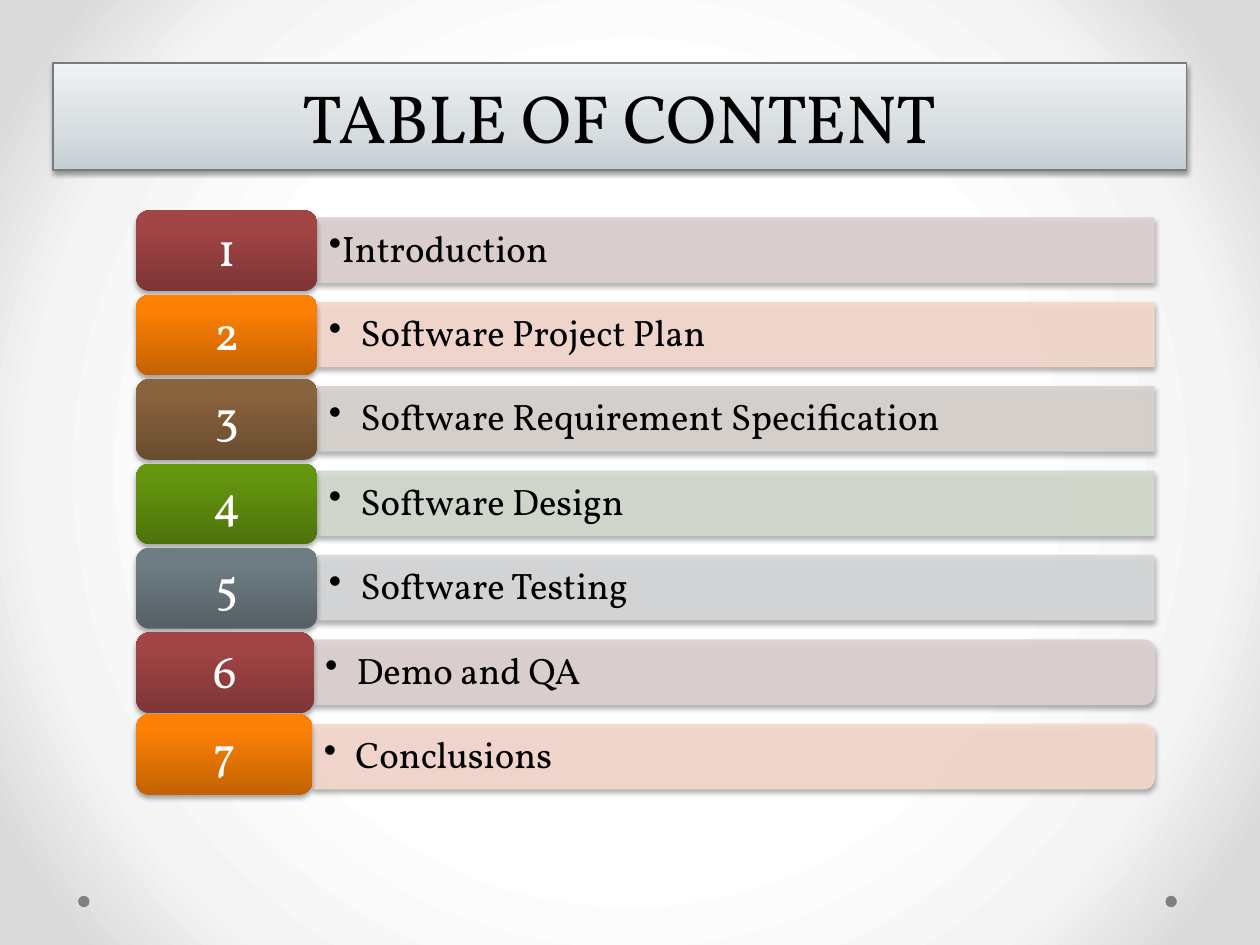
import pptx
import pptx.dml.color
import pptx.enum.shapes
import pptx.enum.text
import pptx.oxml
import pptx.oxml.ns
import pptx.util

Inches = pptx.util.Inches
Pt = pptx.util.Pt
qn = pptx.oxml.ns.qn
KIND = pptx.enum.shapes.MSO_SHAPE
ALIGN = pptx.enum.text.PP_ALIGN
FONT = "Vollkorn"
STEP = 0.67
RIGHT = 9.16

# Bar colour, then badge stops from bottom to top
RED = ("DED1D1", [(0, "7D3535"), (80, "A24545"), (100, "A44343")])
ORANGE = ("F5D9CD", [(0, "C26203"), (80, "FB8004"), (100, "FF8002")])
BROWN = ("D9D3CF", [(0, "694C2F"), (80, "89633D"), (100, "8B633C")])
GREEN = ("D3DACD", [(0, "4D720B"), (80, "64940F"), (100, "65970C")])
GREY = ("D6D8D9", [(0, "566065"), (80, "6F7D83"), (100, "6F7E84")])

# Title, theme, badge width, rounded bar, bullet indent, badge lift
ROWS = [
    ("Introduction", RED, 1.44, False, 0, 0),
    ("Software Project Plan", ORANGE, 1.44, False, 0.25, 0),
    ("Software Requirement Specification", BROWN, 1.44, False, 0.25, 0),
    ("Software Design", GREEN, 1.44, False, 0.25, 0),
    ("Software Testing", GREY, 1.44, False, 0.25, 0),
    ("Demo and QA", RED, 1.41, True, 0.25, 0),
    ("Conclusions", ORANGE, 1.4, True, 0.25, 0.02),
]


def color(text):
    return pptx.dml.color.RGBColor.from_string(text)


def make(xml):
    """Parse an XML element whose root lacks the namespace declaration."""
    tag, rest = xml.split(" ", 1)
    return pptx.oxml.parse_xml(f"{tag} {pptx.oxml.ns.nsdecls('a')} {rest}")


def blend(stops, shade='<a:lin ang="16200000" scaled="0"/>'):
    """Return a gradient fill, which runs upward unless told otherwise."""
    marks = "".join(
        f'<a:gs pos="{pos * 1000}"><a:srgbClr val="{tone}"/></a:gs>'
        for pos, tone in stops)
    return make(f'<a:gradFill rotWithShape="1"><a:gsLst>{marks}</a:gsLst>'
                f"{shade}</a:gradFill>")


def swap(fill, props, stops):
    """Put a gradient in the place of a shape's fill."""
    fill.solid()
    old = props.find(qn("a:solidFill"))
    props.replace(old, blend(stops))


def shade(shape, alpha=35, dist=1.8):
    shape.shadow.inherit = False
    glow = shape.element.spPr.find(qn("a:effectLst"))
    glow.append(make(
        f'<a:outerShdw blurRad="{Pt(3.1)}" dist="{Pt(dist)}" dir="5400000" '
        f'rotWithShape="0"><a:srgbClr val="000000">'
        f'<a:alpha val="{alpha * 1000}"/></a:srgbClr></a:outerShdw>'))


def place(slide, kind, left, top, width, height):
    shape = slide.shapes.add_shape(
        kind, Inches(left), Inches(top), Inches(width), Inches(height))
    shape.shadow.inherit = False
    shape.line.fill.background()
    return shape


def write(shape, text, size, tone, align, inset=(0.1, 0.05)):
    """Fill the frame with one centred line and return its paragraph."""
    frame = shape.text_frame
    frame.text = text
    frame.word_wrap = True
    frame.vertical_anchor = pptx.enum.text.MSO_ANCHOR.MIDDLE
    frame.margin_left = frame.margin_right = Inches(inset[0])
    frame.margin_top = frame.margin_bottom = Inches(inset[1])
    line = frame.paragraphs[0]
    line.alignment = align
    font = line.runs[0].font
    font.name, font.size = FONT, Pt(size)
    font.color.rgb = color(tone)
    return line


def add_back(slide):
    slide.background.fill.solid()
    props = slide.element.find(".//" + qn("p:bgPr"))
    props.replace(props[0], blend(
        [(50, "FFFFFF"), (76, "F4F4F4"), (92, "DADADA")],
        '<a:path path="circle"><a:fillToRect l="50000" t="50000" '
        'r="50000" b="50000"/></a:path>'))
    for left in (0.62, 9.25):
        dot = place(slide, KIND.OVAL, left, 7.11, 0.09, 0.09)
        dot.fill.solid()
        dot.fill.fore_color.rgb = color("808080")


def add_head(slide, left, top, width, height):
    head = place(slide, KIND.RECTANGLE, left, top, width, height)
    swap(head.fill, head.element.spPr,
         [(0, "C5CED2"), (35, "D6DCDF"), (100, "EFF2F3")])
    head.line.color.rgb = color("727D82")
    head.line.width = Pt(0.75)
    shade(head, 38, 1.6)
    write(head, "TABLE OF CONTENT", 39, "000000", ALIGN.CENTER)


def add_bar(slide, left, top, width, height, tone, is_round):
    if is_round:
        # Turned a quarter so that the round corners face right
        bar = place(slide, KIND.ROUND_2_SAME_RECTANGLE,
                    left + (width - height) / 2, top + (height - width) / 2,
                    height, width)
        bar.rotation = 90
    else:
        bar = place(slide, KIND.RECTANGLE, left, top, width, height)
    bar.fill.solid()
    bar.fill.fore_color.rgb = color(tone)
    bar.line.color.rgb = color(tone)
    bar.line.width = Pt(0.75)
    for mark in bar.element.spPr.iter(qn("a:srgbClr")):
        mark.append(make('<a:alpha val="90000"/>'))
    shade(bar)


def add_label(slide, left, top, width, height, text, indent):
    box = slide.shapes.add_textbox(
        Inches(left), Inches(top), Inches(width), Inches(height))
    line = write(box, text, 21, "000000", ALIGN.LEFT, (0.09, 0.04))
    line.line_spacing = 0.9
    props = line._p.get_or_add_pPr()
    props.set("marL", str(Inches(indent)))
    props.set("indent", str(-Inches(indent)))
    props.append(make('<a:buChar char="•"/>'))


def add_badge(slide, left, top, width, height, text, stops):
    badge = place(slide, KIND.ROUNDED_RECTANGLE, left, top, width, height)
    swap(badge.fill, badge.element.spPr, stops)
    shade(badge)
    line = write(badge, text, 27, "FFFFFF", ALIGN.CENTER, (0.11, 0.06))
    line.line_spacing = 0.9


def add_list(slide, left, top):
    for num, row in enumerate(ROWS):
        text, (tone, stops), width, is_round, indent, lift = row
        row_top = top + num * STEP
        edge = left + width
        box = (edge, row_top + 0.06, RIGHT - edge, 0.51)
        add_bar(slide, *box, tone, is_round)
        add_label(slide, *box, text, indent)
        add_badge(slide, left, row_top - lift, width, 0.64,
                  str(num + 1), stops)


def main():
    deck = pptx.Presentation()
    deck.slide_width, deck.slide_height = Inches(10), Inches(7.5)
    slide = deck.slides.add_slide(deck.slide_layouts[6])
    add_back(slide)
    add_list(slide, 1.08, 1.67)
    add_head(slide, 0.42, 0.5, 9, 0.85)
    deck.save("out.pptx")


if __name__ == "__main__":
    main()
